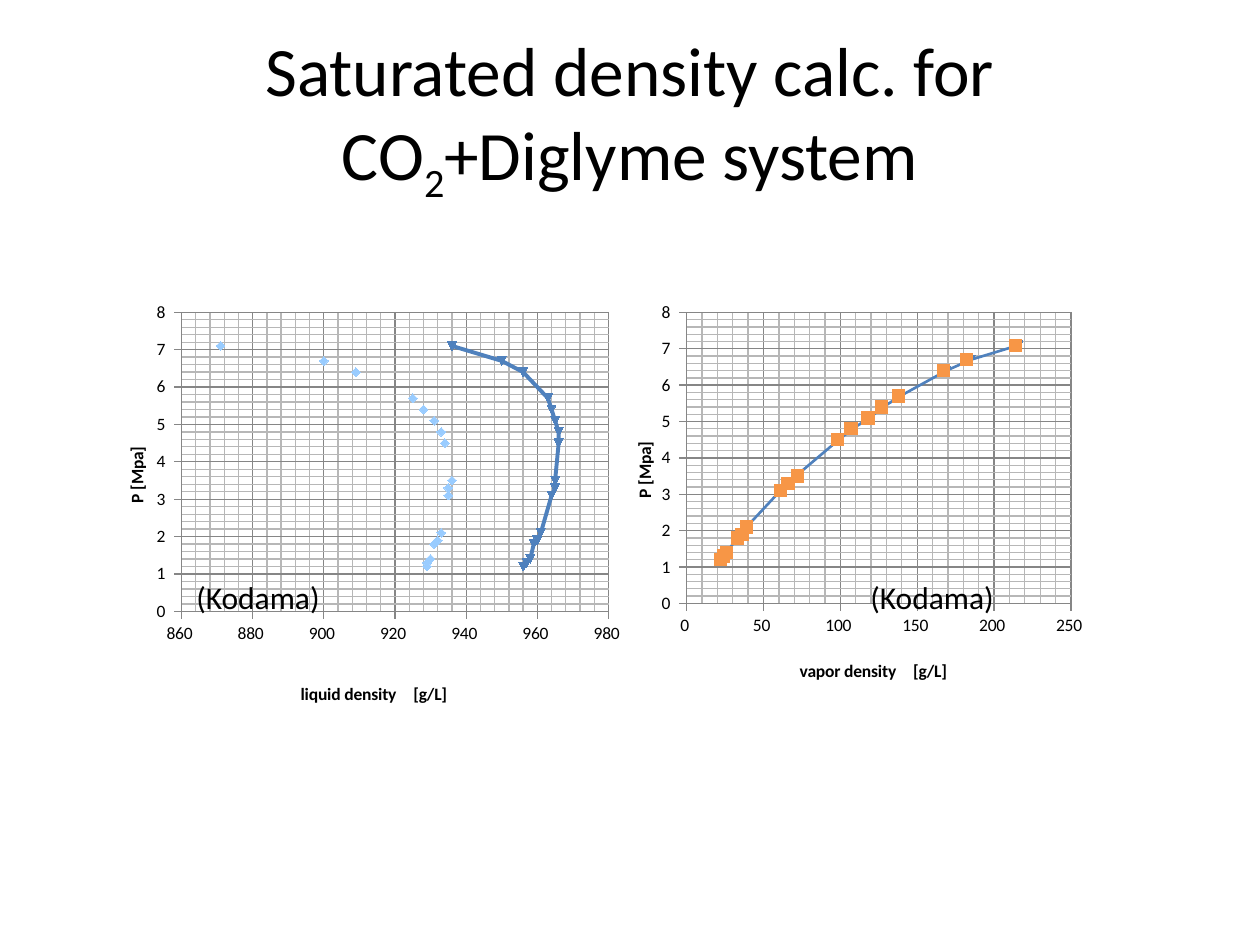
from dataclasses import dataclass
from lxml import etree
from pptx import Presentation
from pptx.chart.data import XyChartData
from pptx.dml.color import RGBColor
from pptx.enum.chart import XL_AXIS_CROSSES, XL_CHART_TYPE, XL_MARKER_STYLE, XL_TICK_MARK
from pptx.enum.text import MSO_ANCHOR, PP_ALIGN
from pptx.oxml.ns import qn
from pptx.util import Inches, Pt

SCATTER = XL_CHART_TYPE.XY_SCATTER
AT_MINIMUM = XL_AXIS_CROSSES.MINIMUM
DIAMOND, SQUARE, AUTO = XL_MARKER_STYLE.DIAMOND, XL_MARKER_STYLE.SQUARE, XL_MARKER_STYLE.AUTOMATIC
OUTSIDE, NO_TICK = XL_TICK_MARK.OUTSIDE, XL_TICK_MARK.NONE
CENTER, MIDDLE = PP_ALIGN.CENTER, MSO_ANCHOR.MIDDLE


@dataclass(frozen=True)
class Theme:
    font: str = "Calibri"
    text: RGBColor = RGBColor(0, 0, 0)
    line: RGBColor = RGBColor(0x4F, 0x81, 0xBD)
    pale: RGBColor = RGBColor(0x99, 0xCC, 0xFF)
    orange: RGBColor = RGBColor(0xF7, 0x96, 0x46)
    major: RGBColor = RGBColor(0x86, 0x86, 0x86)
    minor: RGBColor = RGBColor(0xB7, 0xB7, 0xB7)
    title_size: Pt = Pt(39.6)
    label_size: Pt = Pt(18)
    chart_size: Pt = Pt(10)
    grid_width: Pt = Pt(0.75)


THEME = Theme()

PRESSURE = [1.2, 1.3, 1.4, 1.8, 1.9, 2.1, 3.1, 3.3, 3.5,
            4.5, 4.8, 5.1, 5.4, 5.7, 6.4, 6.7, 7.1]

LIQUID = dict(
    box=(0.75, 2.33, 4.29, 3.31), plot=(1.44, 2.48, 3.39, 2.39),
    x_title="liquid density　[g/L]",
    x_title_at=(2.36, 5.38), y_title_at=(0.97, 3.53),
    x_range=(860, 980, 20),
    measured=[929, 929, 930, 931, 932, 933, 935, 935, 936,
              934, 933, 931, 928, 925, 909, 900, 871],
    calculated=[956, 957, 958, 959, 960, 961, 964, 965, 965,
                966, 966, 965, 964, 963, 956, 950, 936],
    marker=(DIAMOND, 5, THEME.pale), line_width=2.25, smooth=True)

VAPOR = dict(
    box=(4.76, 2.33, 3.94, 3.24), plot=(5.45, 2.48, 3.05, 2.31),
    x_title="vapor density　[g/L]",
    x_title_at=(6.32, 5.18), y_title_at=(5, 3.48),
    x_range=(0, 250, 50),
    measured=[22, 24, 26, 33, 36, 39, 61, 66, 72,
              98, 107, 118, 127, 138, 167, 182, 214],
    calculated=[21, 23, 26, 33, 35, 39, 61, 66, 71,
                99, 108, 119, 128, 139, 169, 185, 216],
    marker=(SQUARE, 7, THEME.orange), line_width=1.5, smooth=False)


def set_font(font, size, bold=False):
    font.name, font.size, font.bold = THEME.font, size, bold
    font.color.rgb = THEME.text


def add_title(s, parts):
    title = s.shapes.title
    title.left, title.top, title.width, title.height = map(Inches, (0.5, 0.3, 9, 1.25))
    tf = title.text_frame
    tf.vertical_anchor = MIDDLE
    p = tf.paragraphs[0]
    p.alignment = CENTER
    set_font(p.font, THEME.title_size)
    for text, baseline in parts:
        r = p.add_run()
        r.text = text
        if baseline:
            r.font._element.set("baseline", str(baseline))


def add_label(s, text, left, top):
    tf = s.shapes.add_textbox(*map(Inches, (left, top, 1.5, 0.4))).text_frame
    tf.word_wrap = True
    p = tf.paragraphs[0]
    p.text = text
    set_font(p.font, THEME.label_size)


def place(element, index, box, left, top, width=None, height=None):
    for old in element.findall(qn("c:layout")):
        element.remove(old)
    layout = etree.Element(qn("c:layout"))
    manual = etree.SubElement(layout, qn("c:manualLayout"))
    values = {"xMode": "edge", "yMode": "edge",
              "x": (left - box[0]) / box[2], "y": (top - box[1]) / box[3]}
    if width:
        values = {"layoutTarget": "inner", **values,
                  "w": width / box[2], "h": height / box[3]}
    for tag, value in values.items():
        etree.SubElement(manual, qn(f"c:{tag}"), val=str(value))
    element.insert(index, layout)


def style_minor_gridlines(axis):
    axis.has_minor_gridlines = True
    gridlines = axis._element.find(qn("c:minorGridlines"))
    sp_pr = etree.SubElement(gridlines, qn("c:spPr"))
    line = etree.SubElement(sp_pr, qn("a:ln"), w=str(int(THEME.grid_width)))
    fill = etree.SubElement(line, qn("a:solidFill"))
    etree.SubElement(fill, qn("a:srgbClr"), val=str(THEME.minor))


def style_axis(axis, low, high, step, title, title_at, box):
    axis.minimum_scale, axis.maximum_scale = low, high
    axis.major_unit, axis.minor_unit = step, step / 5
    axis.major_tick_mark, axis.minor_tick_mark = OUTSIDE, NO_TICK
    axis.crosses = AT_MINIMUM
    axis.has_major_gridlines = True
    for part in (axis, axis.major_gridlines):
        part.format.line.color.rgb = THEME.major
        part.format.line.width = THEME.grid_width
    style_minor_gridlines(axis)
    axis.tick_labels.number_format = "0_ "
    axis.tick_labels.number_format_is_linked = False
    p = axis.axis_title.text_frame.paragraphs[0]
    p.text = title
    set_font(p.font, THEME.chart_size, bold=True)
    place(axis.axis_title._element, 1, box, *title_at)


def style_marker(series, style, size, color):
    marker = series.marker
    marker.style, marker.size = style, size
    marker.format.fill.solid()
    marker.format.fill.fore_color.rgb = color
    marker.format.line.fill.background()


def add_density_chart(s, spec):
    data = XyChartData()
    for name, key in (("Series 1", "measured"), ("Series 2", "calculated")):
        series = data.add_series(name)
        for x, y in zip(spec[key], PRESSURE):
            series.add_data_point(x, y)
    box = spec["box"]
    chart = s.shapes.add_chart(SCATTER, *map(Inches, box), data).chart
    chart.has_title = chart.has_legend = False
    set_font(chart.font, THEME.chart_size)
    plot = chart.plots[0]
    plot.vary_by_categories = False
    measured, calculated = plot.series

    measured.smooth = False
    measured.format.line.fill.background()
    style_marker(measured, *spec["marker"])

    calculated.smooth = spec["smooth"]
    calculated.format.line.color.rgb = THEME.line
    calculated.format.line.width = Pt(spec["line_width"])
    calculated._element.find(qn("c:idx")).set("val", "2")
    style_marker(calculated, AUTO, 5, THEME.line)

    style_axis(chart.category_axis, *spec["x_range"], spec["x_title"], spec["x_title_at"], box)
    style_axis(chart.value_axis, 0, 8, 1, "P [Mpa]", spec["y_title_at"], box)
    place(chart._chartSpace.chart.plotArea, 0, box, *spec["plot"])


def main():
    prs = Presentation()
    prs.slide_width, prs.slide_height = Inches(10), Inches(7.5)
    s = prs.slides.add_slide(prs.slide_layouts[5])
    add_title(s, [("Saturated density calc. for CO", 0), ("2", -25000), ("+Diglyme system", 0)])
    for spec in (LIQUID, VAPOR):
        add_density_chart(s, spec)
    for left in (6.81, 1.46):
        add_label(s, "(Kodama)", left, 4.54)
    prs.save("out.pptx")


if __name__ == "__main__":
    main()
